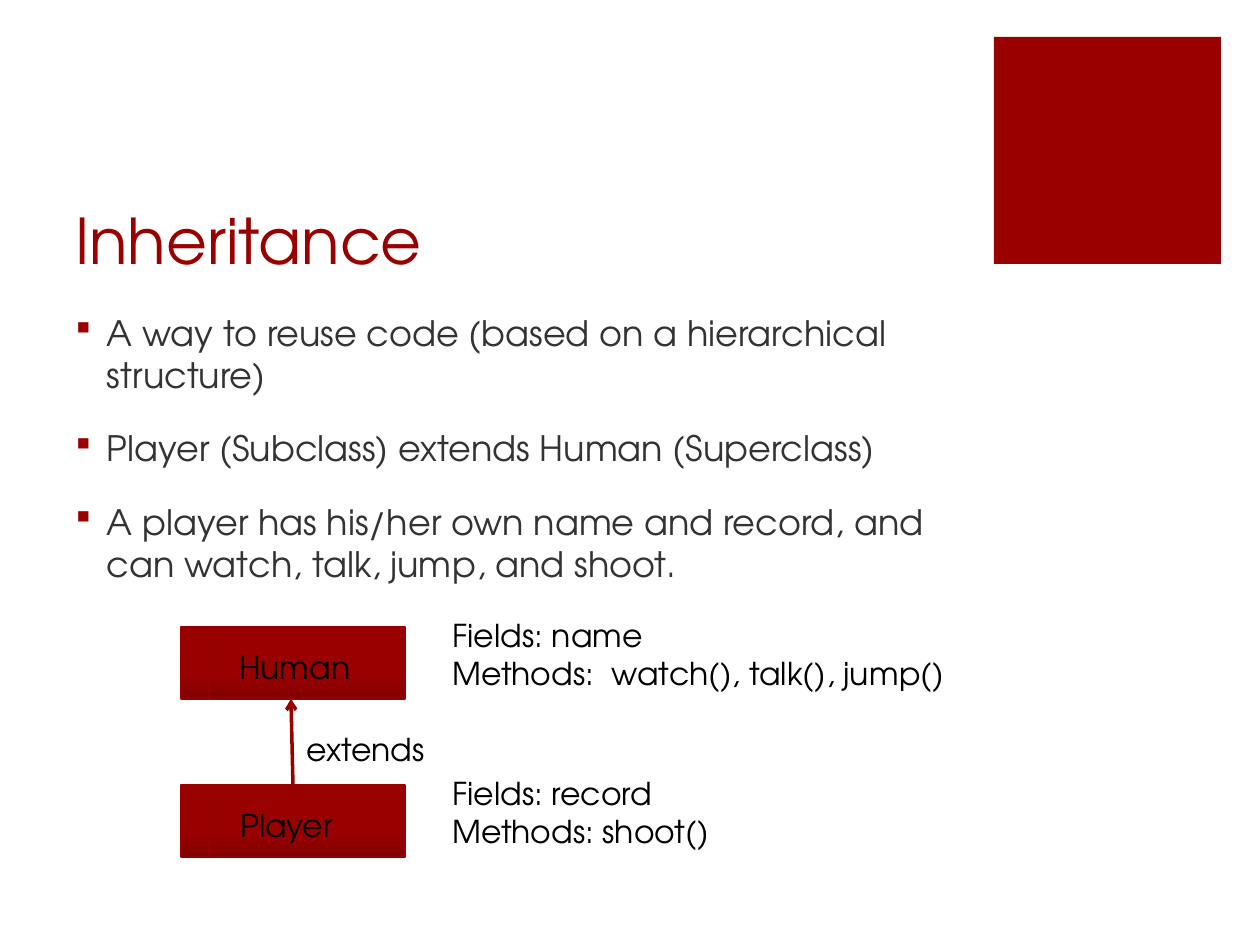
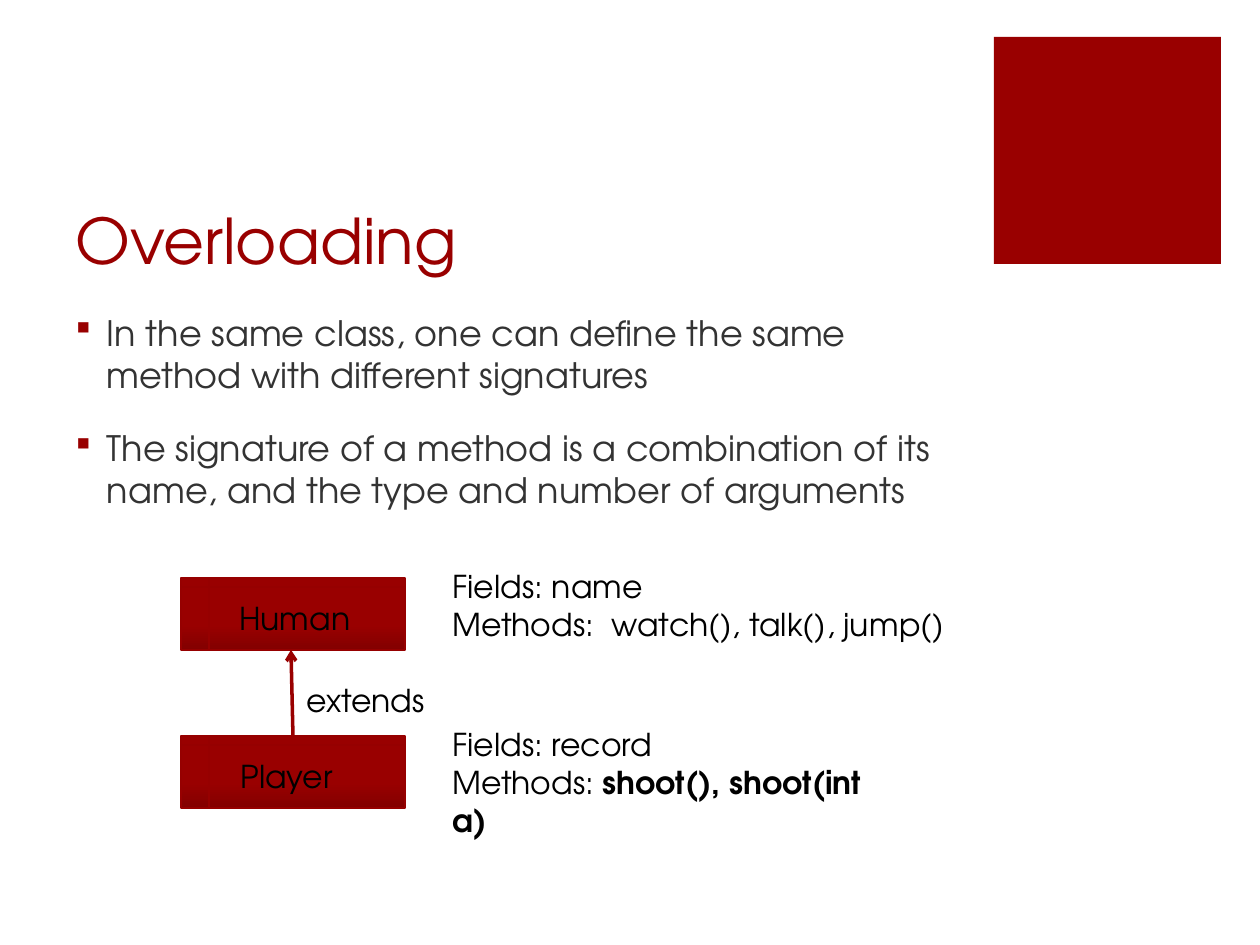
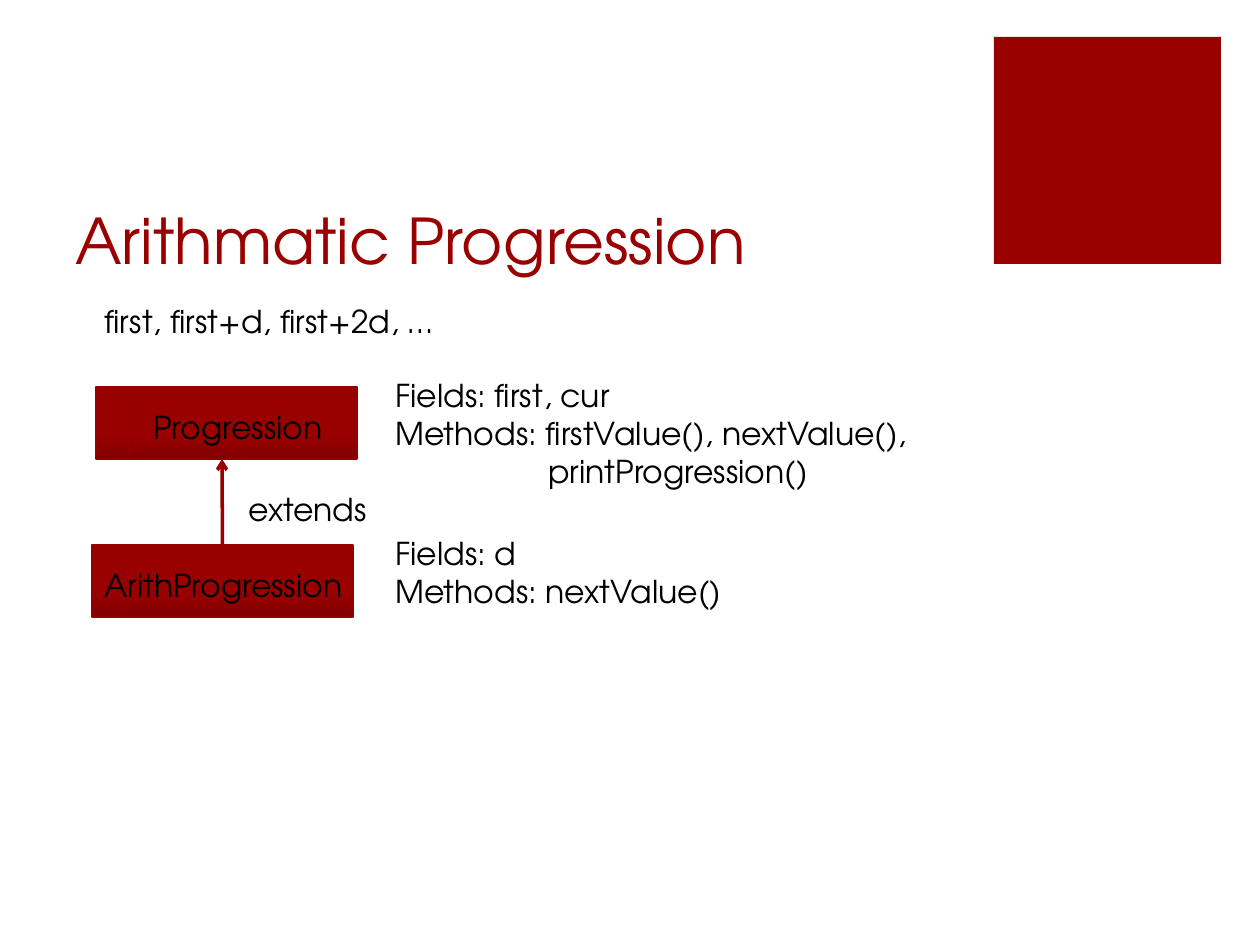
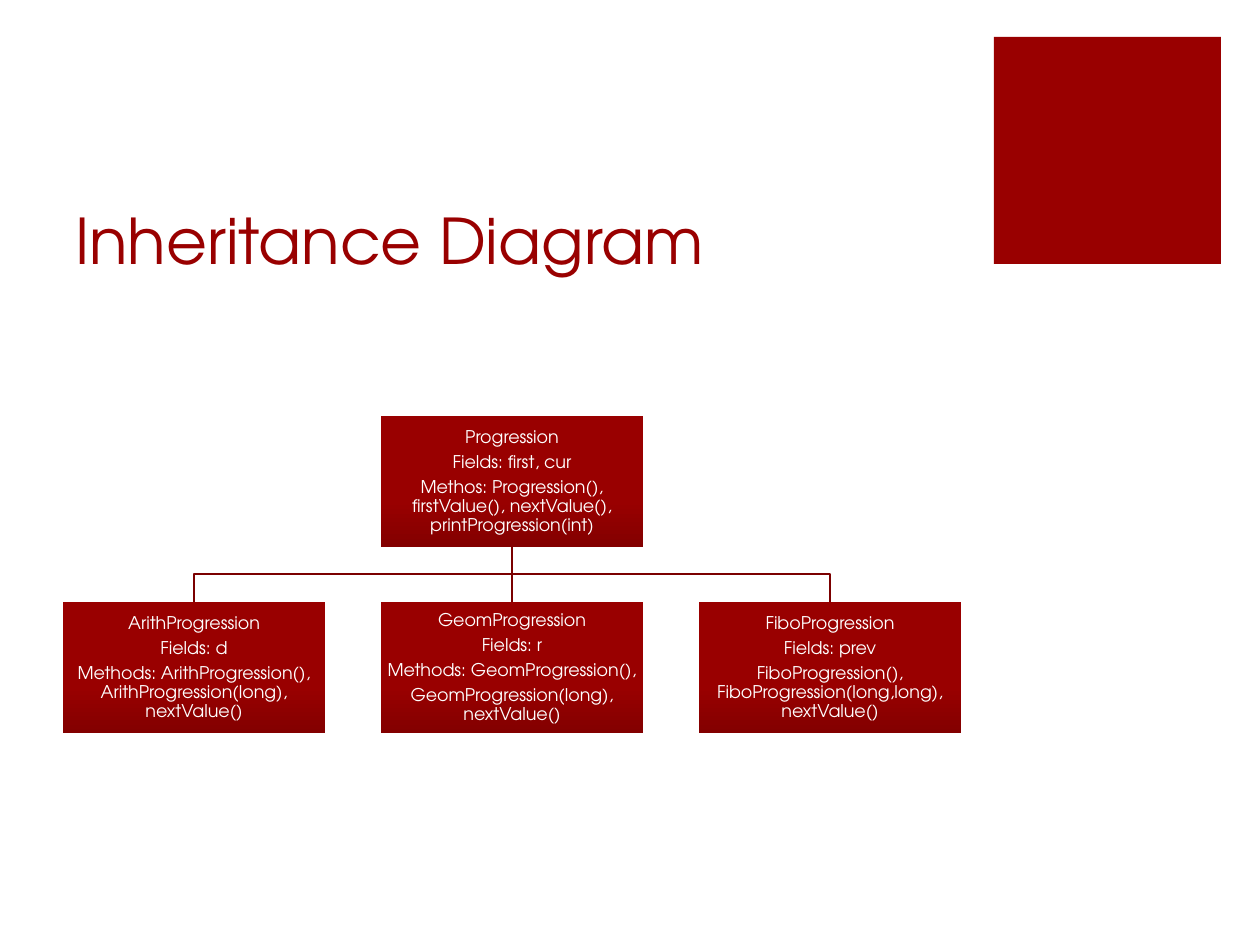
from copy import deepcopy

from lxml import etree
from pptx import Presentation
from pptx.dml.color import RGBColor
from pptx.enum.shapes import MSO_CONNECTOR, MSO_SHAPE
from pptx.enum.text import MSO_ANCHOR, MSO_AUTO_SIZE, PP_ALIGN
from pptx.oxml.ns import qn
from pptx.util import Pt

PX = 7257  # EMU per px, 126 px to the inch
FONT = "TeX Gyre Adventor"
RED, DARK_RED, EDGE_RED, TREE_RED = "990000", "830000", "960000", "7B0000"
GREY, BLACK, WHITE = "333333", "000000", "FFFFFF"
RECTANGLE = MSO_SHAPE.RECTANGLE
STORAGE = MSO_SHAPE.FLOWCHART_INTERNAL_STORAGE
STRAIGHT = MSO_CONNECTOR.STRAIGHT
CENTER = PP_ALIGN.CENTER
MIDDLE, BOTTOM = MSO_ANCHOR.MIDDLE, MSO_ANCHOR.BOTTOM
GROW = MSO_AUTO_SIZE.SHAPE_TO_FIT_TEXT
TOP_SIDE, BOTTOM_SIDE = 0, 2

CLASS_HEIGHT, CLASS_STEP = 72, 158
NODE_WIDTH, NODE_HEIGHT, NODE_STEP = 262, 131, 318
ROOT_TOP, CHILD_TOP, TREE_LEFT = 416, 602, 63


def write(shape, lines, size, color):
    """Fill a shape with one paragraph per line; **marks** set bold text."""
    frame = shape.text_frame
    frame.word_wrap = True
    for index, line in enumerate(lines):
        paragraph = frame.paragraphs[0] if index == 0 else frame.add_paragraph()
        for part_index, part in enumerate(line.split("**")):
            if part:
                run = paragraph.add_run()
                run.text = part
                run.font.name = FONT
                run.font.size = Pt(size)
                run.font.color.rgb = RGBColor.from_string(color)
                if part_index % 2:
                    run.font.bold = True
    return frame


def add_class(slide, kind, left, top, width, height):
    """Add a class box that darkens towards its lower edge."""
    box = slide.shapes.add_shape(kind, left * PX, top * PX, width * PX, height * PX)
    box.shadow.inherit = False
    box.fill.gradient()
    box.fill.gradient_angle = 90
    for stop, color, position in zip(box.fill.gradient_stops, (DARK_RED, RED), (0, 0.35)):
        stop.color.rgb = RGBColor.from_string(color)
        stop.position = position
    stops = box._element.spPr.find(".//" + qn("a:gsLst"))
    for position in (70000, 100000):
        plateau = deepcopy(stops[1])
        plateau.set("pos", str(position))
        stops.append(plateau)
    return box


presentation = Presentation()
presentation.slide_width = 1260 * PX
presentation.slide_height = 945 * PX

# Parts that every slide shares
slides = []
for title in ("Inheritance", "Overloading", "Arithmatic Progression", "Inheritance Diagram"):
    slide = presentation.slides.add_slide(presentation.slide_layouts[6])
    corner = slide.shapes.add_shape(RECTANGLE, 994 * PX, 37 * PX, 227 * PX, 227 * PX)
    corner.shadow.inherit = False
    corner.fill.solid()
    corner.fill.fore_color.rgb = RGBColor.from_string(RED)
    corner.line.fill.background()
    heading = slide.shapes.add_textbox(63 * PX, 126 * PX, 897 * PX, 157 * PX)
    write(heading, [title], 36, RED).vertical_anchor = BOTTOM
    slides.append(slide)

# Bullet points
points_by_slide = [
    ["A way to reuse code (based on a hierarchical structure)",
     "Player (Subclass) extends Human (Superclass)",
     "A player has his/her own name and record, and can watch, talk, jump, and shoot."],
    ["In the same class, one can define the same method with different signatures",
     "The signature of a method is a combination of its name, and the type and number "
     "of arguments"],
]
for slide, points in zip(slides, points_by_slide):
    body = slide.shapes.add_textbox(63 * PX, 305 * PX, 897 * PX, 539 * PX)
    for paragraph in write(body, points, 20, GREY).paragraphs:
        paragraph.space_before = Pt(18)
        properties = paragraph._p.get_or_add_pPr()
        properties.set("marL", "228600")
        properties.set("indent", "-228600")
        bullet_color = etree.SubElement(properties, qn("a:buClr"))
        etree.SubElement(bullet_color, qn("a:srgbClr"), val=RED)
        etree.SubElement(properties, qn("a:buFont"), typeface="Wingdings", charset="2")
        etree.SubElement(properties, qn("a:buChar"), char="§")

# Parent and child class diagrams
human = ("Human", 181, 227, 137, 524, ["Fields: name", "Methods:  watch(), talk(), jump()"])
progression = ("Progression", 96, 141, 198, 541,
               ["Fields: first, cur", "Methods: firstValue(), nextValue(),",
                "printProgression()"])
# Each class: name, box left, name left, name width, members width, members
diagrams = [
    # top, box width, arrow tip, extends left, members left, classes
    (627, 224, 291, 294, 440, [
        human,
        ("Player", 181, 228, 120, 295, ["Fields: record", "Methods: shoot()"])]),
    (578, 224, 291, 294, 440, [
        human,
        ("Player", 181, 228, 120, 474,
         ["Fields: record", "Methods: **shoot(), shoot(int a)**"])]),
    (387, 261, 222, 236, 383, [
        progression,
        ("ArithProgression", 92, 92, 267, 355, ["Fields: d", "Methods: nextValue()"])]),
]
for slide, diagram in zip(slides, diagrams):
    top, class_width, tip, extends_left, members_left, classes = diagram
    labels = [(extends_left, top + 97, 146, ["extends"])]
    for row, (name, left, name_left, name_width, members_width, members) in enumerate(classes):
        class_top = top + row * CLASS_STEP
        class_box = add_class(slide, STORAGE, left, class_top, class_width, CLASS_HEIGHT)
        class_box.line.color.rgb = RGBColor.from_string(EDGE_RED)
        class_box.line.width = Pt(1)
        labels.append((name_left, class_top + 15, name_width, [name]))
        labels.append((members_left, class_top - 17, members_width, members))

    arrow = slide.shapes.add_connector(
        STRAIGHT, tip * PX, (top + CLASS_STEP) * PX, tip * PX, (top + CLASS_HEIGHT) * PX)
    arrow.begin_connect(class_box, TOP_SIDE)
    arrow.line.color.rgb = RGBColor.from_string(RED)
    arrow.line.width = Pt(2)
    etree.SubElement(arrow.line._get_or_add_ln(), qn("a:tailEnd"), type="arrow")
    etree.SubElement(arrow._element.spPr, qn("a:effectLst"))

    for left, label_top, width, lines in labels:
        height = 12 + 38 * len(lines)
        label = slide.shapes.add_textbox(left * PX, label_top * PX, width * PX, height * PX)
        frame = write(label, lines, 18, BLACK)
        frame.auto_size = GROW
        for continuation in frame.paragraphs[2:]:
            continuation._p.get_or_add_pPr().set("marL", str(153 * PX))

sequence = slides[2].shapes.add_textbox(92 * PX, 296 * PX, 357 * PX, 50 * PX)
write(sequence, ["first, first+d, first+2d, …"], 18, BLACK).auto_size = GROW

# Inheritance tree
tree_slide = slides[3]
root_x = TREE_LEFT + NODE_STEP + NODE_WIDTH // 2
root_bottom = ROOT_TOP + NODE_HEIGHT
branch_y = (root_bottom + CHILD_TOP) // 2
for child_x in (root_x + NODE_STEP, root_x - NODE_STEP):
    outline = tree_slide.shapes.build_freeform(root_x, root_bottom, scale=PX)
    outline.add_line_segments(
        [(root_x, branch_y), (child_x, branch_y), (child_x, CHILD_TOP)], close=False)
    branch = outline.convert_to_shape()
    branch.shadow.inherit = False
    branch.fill.background()
    branch.line.color.rgb = RGBColor.from_string(TREE_RED)
    branch.line.width = Pt(1)

tree = [
    (1, ROOT_TOP, ["Progression", "Fields: first, cur",
                   "Methos: Progression(), firstValue(), nextValue(), printProgression(int)"]),
    (0, CHILD_TOP, ["ArithProgression", "Fields: d",
                    "Methods: ArithProgression(), ArithProgression(long), nextValue()"]),
    (1, CHILD_TOP, ["GeomProgression", "Fields: r", "Methods: GeomProgression(),",
                    "GeomProgression(long), nextValue()"]),
    (2, CHILD_TOP, ["FiboProgression", "Fields: prev",
                    "FiboProgression(), FiboProgression(long,long), nextValue()"]),
]
nodes = []
for column, top, lines in tree:
    node = add_class(tree_slide, RECTANGLE, TREE_LEFT + column * NODE_STEP, top,
                     NODE_WIDTH, NODE_HEIGHT)
    node.line.fill.background()
    frame = write(node, lines, 10, WHITE)
    frame.vertical_anchor = MIDDLE
    frame.margin_left = frame.margin_right = frame.margin_top = frame.margin_bottom = PX
    for paragraph in frame.paragraphs:
        paragraph.alignment = CENTER
        paragraph.line_spacing = 0.9
        paragraph.space_after = Pt(3.5)
    nodes.append(node)

trunk = tree_slide.shapes.add_connector(
    STRAIGHT, root_x * PX, root_bottom * PX, root_x * PX, CHILD_TOP * PX)
trunk.begin_connect(nodes[0], BOTTOM_SIDE)
trunk.end_connect(nodes[2], TOP_SIDE)
trunk.line.color.rgb = RGBColor.from_string(TREE_RED)
trunk.line.width = Pt(1)
etree.SubElement(trunk._element.spPr, qn("a:effectLst"))

presentation.save("out.pptx")
